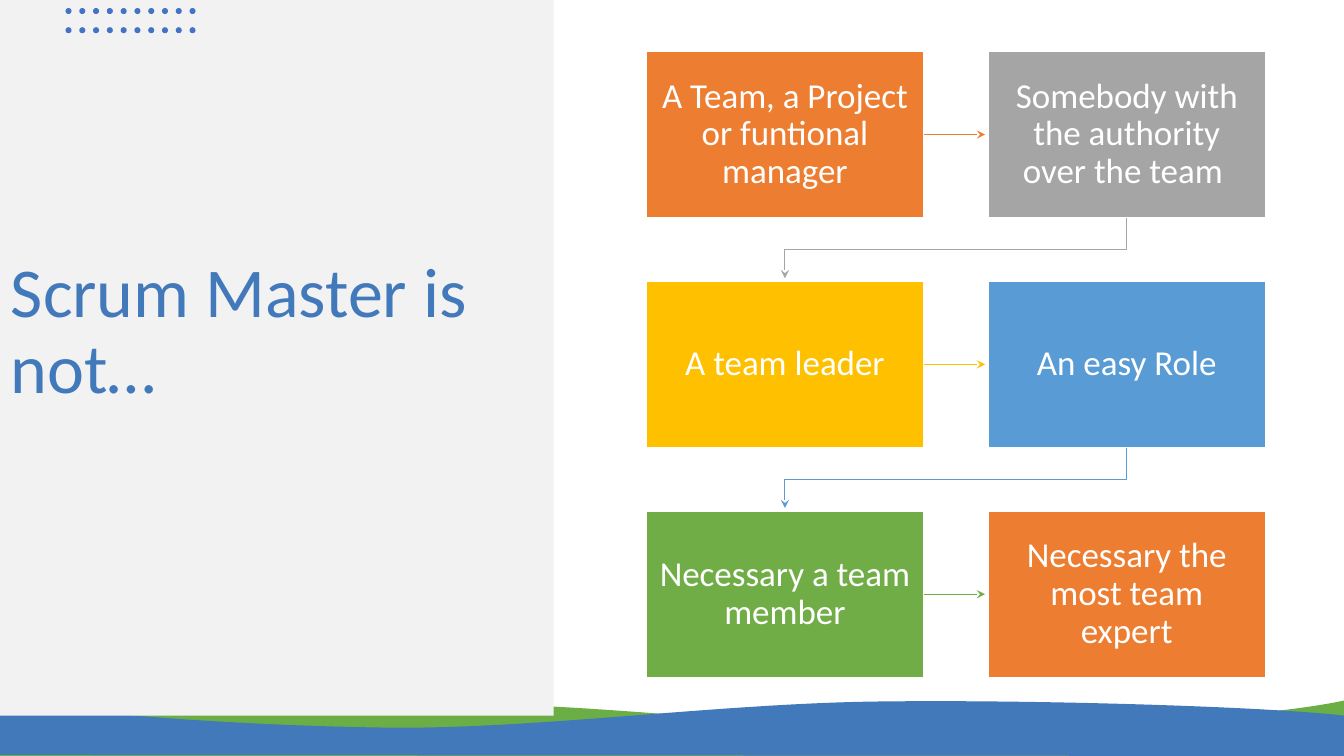
from dataclasses import dataclass

from lxml import etree
from pptx import Presentation
from pptx.dml.color import RGBColor
from pptx.enum.shapes import MSO_CONNECTOR, MSO_SHAPE
from pptx.enum.text import MSO_ANCHOR, PP_ALIGN
from pptx.oxml.ns import qn
from pptx.util import Inches, Pt

RECTANGLE = MSO_SHAPE.RECTANGLE
OVAL = MSO_SHAPE.OVAL
STRAIGHT = MSO_CONNECTOR.STRAIGHT
MIDDLE = MSO_ANCHOR.MIDDLE
LEFT = PP_ALIGN.LEFT
CENTER = PP_ALIGN.CENTER
RIGHT_SIDE = 3


@dataclass(frozen=True)
class Theme:
    font: str = "Calibri"
    title_size: float = 50
    box_size: float = 25
    line_spacing: float = 0.9
    outline_width: float = 1
    arrow_width: float = 0.75
    white: str = "FFFFFF"
    panel: str = "F2F2F2"
    title: str = "4279BB"
    dot: str = "4472C4"
    wave_green: str = "6BAE45"
    wave_blue: str = "4279BB"
    orange: str = "ED7D31"
    gray: str = "A5A5A5"
    yellow: str = "FFC000"
    blue: str = "599BD5"
    green: str = "70AD47"


def apply(target, values):
    for name, value in values.items():
        setattr(target, name, value)


class SlideBuilder:
    def __init__(self, slide, theme):
        self.slide = slide
        self.theme = theme

    def fill(self, shape, color):
        shape.shadow.inherit = False
        shape.fill.solid()
        shape.fill.fore_color.rgb = RGBColor.from_string(color)
        shape.line.fill.background()

    def outline(self, shape, color, width):
        shape.line.width = Pt(width)
        shape.line.color.rgb = RGBColor.from_string(color)

    def arrow_style(self, shape, color):
        self.outline(shape, color, self.theme.arrow_width)
        line = shape.line._get_or_add_ln()
        etree.SubElement(line, qn("a:tailEnd"), type="stealth")

    def shape(self, kind, left, top, width, height, color):
        shape = self.slide.shapes.add_shape(
            kind, Inches(left), Inches(top), Inches(width), Inches(height)
        )
        self.fill(shape, color)
        return shape

    def freeform(self, points, close):
        vertices = [(Inches(x), Inches(y)) for x, y in points]
        builder = self.slide.shapes.build_freeform(*vertices[0])
        builder.add_line_segments(vertices[1:], close=close)
        shape = builder.convert_to_shape()
        shape.shadow.inherit = False
        return shape

    def wave(self, start, curves, base, color):
        shape = self.freeform([start, *(curve[-1] for curve in curves), *base], True)
        self.fill(shape, color)
        segments = list(shape._element.iter(qn("a:lnTo")))
        for segment, curve in zip(segments, curves):
            segment.tag
            bezier = etree.Element(qn("a:cubicBezTo"))
            for x, y in curve:
                etree.SubElement(
                    bezier, qn("a:pt"),
                    x=str(Inches(x) - shape.left), y=str(Inches(y) - shape.top),
                )
            segment.getparent().replace(segment, bezier)

    def text(self, shape, text, size, color, alignment, margins):
        horizontal, vertical = map(Inches, margins)
        frame = shape.text_frame
        apply(frame, {
            "word_wrap": True, "vertical_anchor": MIDDLE,
            "margin_left": horizontal, "margin_right": horizontal,
            "margin_top": vertical, "margin_bottom": vertical,
        })
        paragraph = frame.paragraphs[0]
        apply(paragraph, {
            "text": text, "alignment": alignment,
            "line_spacing": self.theme.line_spacing,
        })
        font = paragraph.runs[0].font
        apply(font, {"name": self.theme.font, "size": Pt(size)})
        font.color.rgb = RGBColor.from_string(color)

    def title(self, left, top, width, height, text):
        shape = self.slide.shapes.add_textbox(
            Inches(left), Inches(top), Inches(width), Inches(height)
        )
        self.text(shape, text, self.theme.title_size, self.theme.title, LEFT, (0.1, 0.05))

    def box(self, left, top, width, height, text, color):
        shape = self.shape(RECTANGLE, left, top, width, height, color)
        self.outline(shape, self.theme.white, self.theme.outline_width)
        self.text(shape, text, self.theme.box_size, self.theme.white, CENTER, (0.13, 0.14))
        return shape

    def straight_arrow(self, source, end_x, y, color):
        connector = self.slide.shapes.add_connector(
            STRAIGHT, source.left + source.width, Inches(y), Inches(end_x), Inches(y)
        )
        connector.begin_connect(source, RIGHT_SIDE)
        self.arrow_style(connector, color)
        etree.SubElement(connector._element.spPr, qn("a:effectLst"))

    def elbow_arrow(self, points, color):
        shape = self.freeform(points, False)
        shape.fill.background()
        self.arrow_style(shape, color)


def main():
    presentation = Presentation()
    presentation.slide_width = Inches(13.33)
    presentation.slide_height = Inches(7.5)
    slide = presentation.slides.add_slide(presentation.slide_layouts[6])
    theme = Theme()
    builder = SlideBuilder(slide, theme)

    builder.wave(
        (-0.01, 7.12),
        [[(0.76, 7.03), (3.06, 6.96), (4.62, 6.98)],
         [(6.18, 7), (7.89, 7.24), (9.35, 7.24)],
         [(10.8, 7.23), (12.65, 7.1), (13.33, 6.95)],
         [(13.33, 7.19), (13.33, 7.27), (13.34, 7.5)]],
        [(0, 7.52)],
        theme.wave_green,
    )
    builder.wave(
        (13.33, 7.1),
        [[(12.56, 7.01), (10.26, 6.94), (8.7, 6.96)],
         [(7.15, 6.98), (5.43, 7.22), (3.98, 7.22)],
         [(2.53, 7.21), (0.68, 7.08), (-0.01, 6.93)],
         [(-0.01, 7.17), (-0.01, 7.26), (-0.01, 7.49)]],
        [(13.33, 7.5)],
        theme.wave_blue,
    )
    builder.shape(RECTANGLE, 0, 0, 5.49, 7.1, theme.panel)
    builder.title(0.01, 2.3, 5.76, 2, "Scrum Master is not…")

    for column in range(10):
        for top in (0.08, 0.27):
            builder.shape(OVAL, 0.65 + column * 1.23 / 9, top, 0.06, 0.06, theme.dot)

    steps = [
        ("A Team, a Project or funtional manager", theme.orange),
        ("Somebody with the authority over the team ", theme.gray),
        ("A team leader", theme.yellow),
        ("An easy Role", theme.blue),
        ("Necessary a team member", theme.green),
        ("Necessary the most team expert", theme.orange),
    ]
    left, first_top, width, height = 6.41, 0.51, 2.75, 1.65
    column_pitch, row_pitch = 3.39, 2.28
    target_x = left + width / 2
    source_x = target_x + column_pitch
    for index, (text, color) in enumerate(steps):
        row, column = divmod(index, 2)
        top = first_top + row * row_pitch
        bottom = top + height
        box = builder.box(left + column * column_pitch, top, width, height, text, color)
        if column == 0:
            builder.straight_arrow(box, left + column_pitch - 0.03, top + height / 2, color)
        elif index < len(steps) - 1:
            bend = bottom + 0.32
            builder.elbow_arrow(
                [(source_x, bottom), (source_x, bend), (target_x, bend), (target_x, bottom + 0.6)],
                color,
            )

    presentation.save("out.pptx")


if __name__ == "__main__":
    main()
